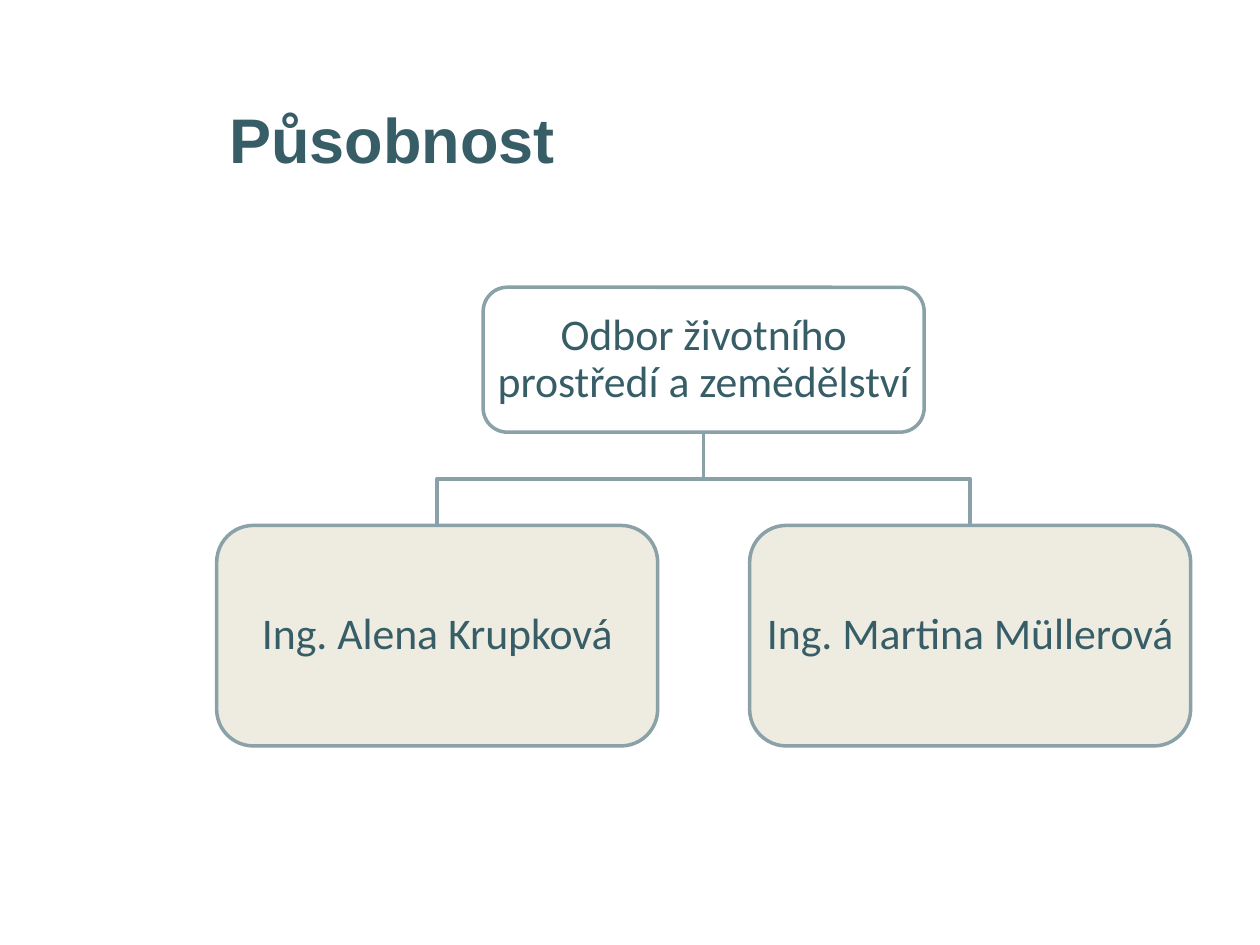
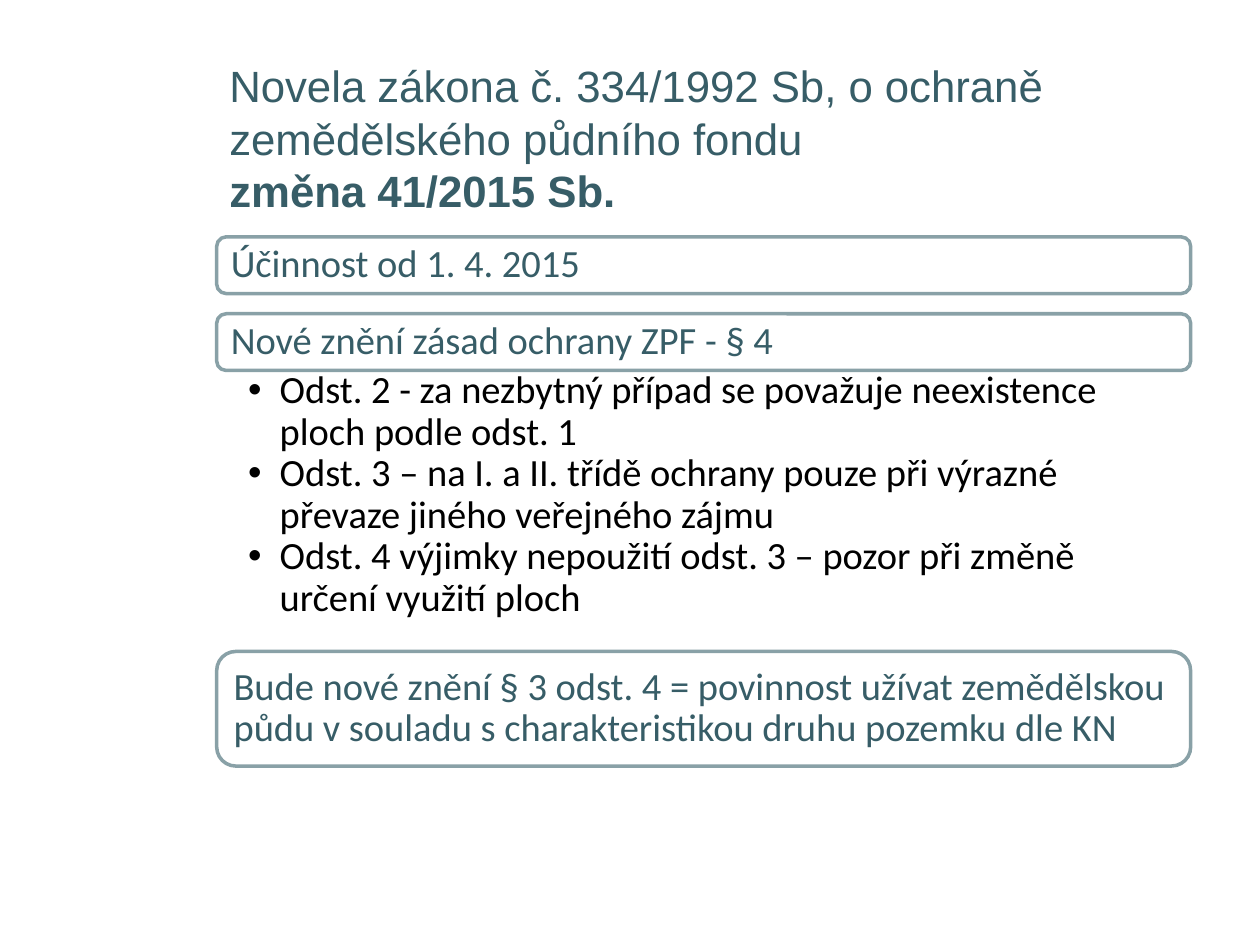
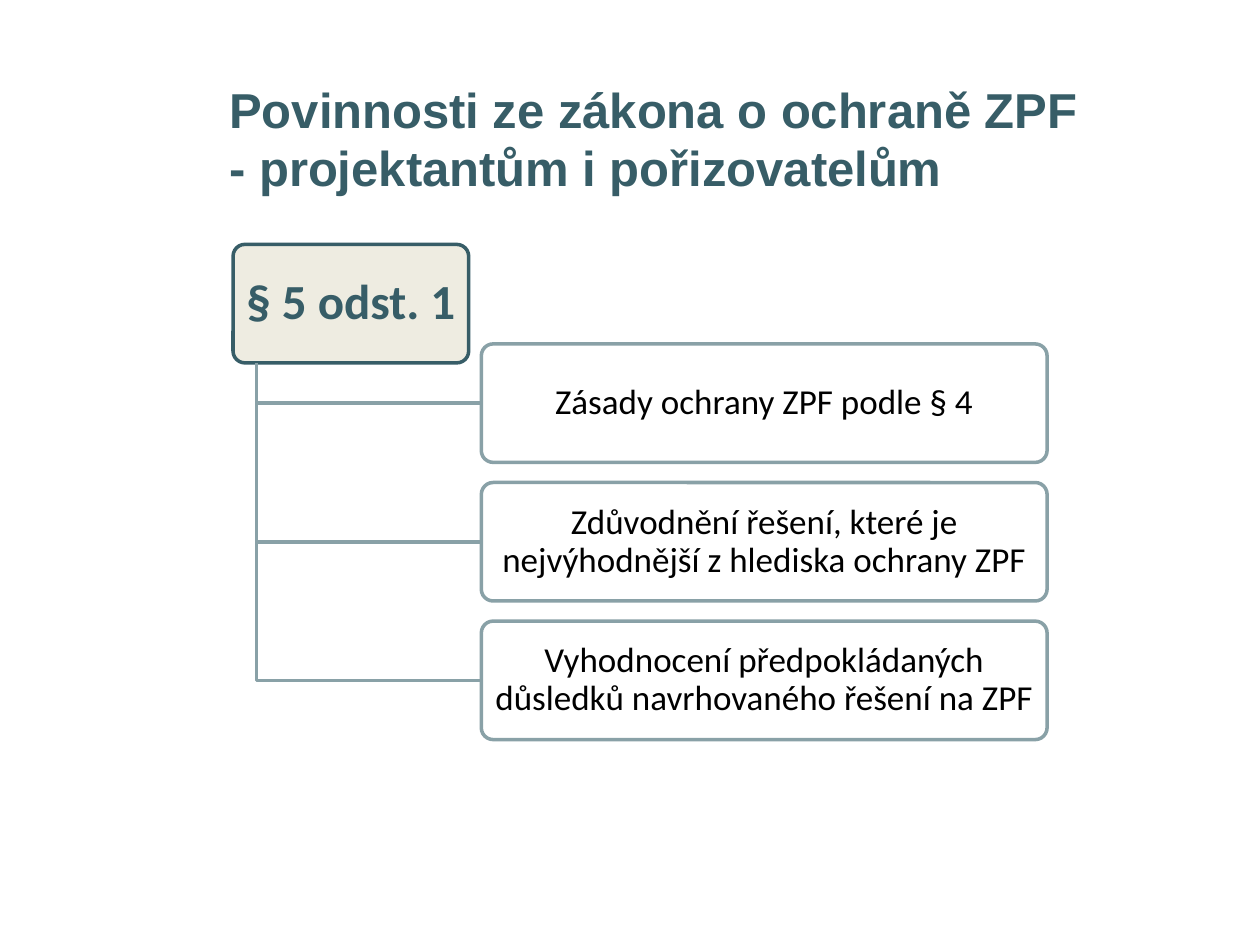
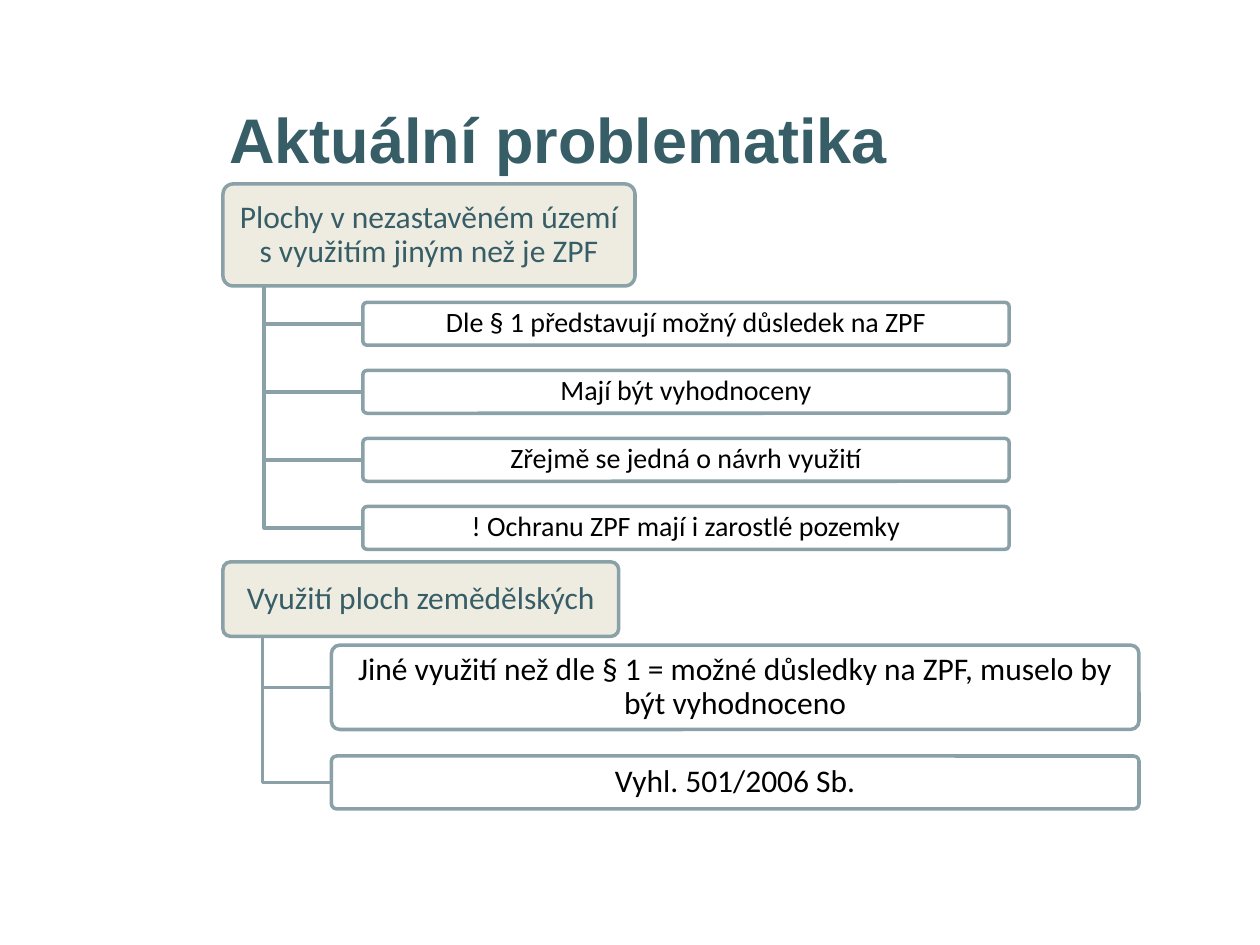
from dataclasses import dataclass

from lxml import etree
from pptx import Presentation
from pptx.dml.color import RGBColor
from pptx.enum.shapes import MSO_SHAPE
from pptx.enum.text import MSO_ANCHOR, MSO_AUTO_SIZE, PP_ALIGN
from pptx.oxml.ns import qn
from pptx.util import Inches, Pt

ROUND_RECT = MSO_SHAPE.ROUNDED_RECTANGLE
LEFT, CENTER = PP_ALIGN.LEFT, PP_ALIGN.CENTER
TOP, MIDDLE = MSO_ANCHOR.TOP, MSO_ANCHOR.MIDDLE
NO_AUTOFIT = MSO_AUTO_SIZE.NONE
TITLE_AND_BODY, TITLE_ONLY = 1, 5


@dataclass(frozen=True)
class Theme:
    teal: str = "375D67"
    line: str = "89A1A7"
    sand: str = "EEECE1"
    white: str = "FFFFFF"
    black: str = "000000"
    title_font: str = "Arial"
    body_font: str = "Calibri"
    title: int = 36
    title_medium: int = 28
    title_small: int = 25
    node: int = 25
    banner: int = 22
    root_large: int = 28
    leaf_large: int = 20
    tree: int = 18
    leaf_small: int = 16
    line_width: int = 2
    left: float = 1.72
    width: float = 7.73


THEME = Theme()


def rgb(value):
    return RGBColor.from_string(value)


def place(sp, left, top, width, height):
    sp.left, sp.top = Inches(left), Inches(top)
    sp.width, sp.height = Inches(width), Inches(height)


def add_bullet(p, indent):
    p.level = 1
    pPr = p._p.get_or_add_pPr()
    pPr.set("marL", str(Inches(indent)))
    pPr.set("indent", str(-Inches(indent)))
    etree.SubElement(pPr, qn("a:buFont")).set("typeface", "Arial")
    etree.SubElement(pPr, qn("a:buChar")).set("char", "•")


def write_text(tf, text, *, size, color=THEME.teal, font=THEME.body_font, bold=False,
               bold_from=0, align=LEFT, anchor=MIDDLE, insets=(0.1, 0.05, 0.1, 0.05),
               spacing=0.9, bullet_indent=None):
    tf.word_wrap = True
    tf.auto_size = NO_AUTOFIT
    tf.vertical_anchor = anchor
    tf.margin_left, tf.margin_top, tf.margin_right, tf.margin_bottom = map(Inches, insets)
    paragraphs = [text] if isinstance(text, str) else text
    for i, paragraph in enumerate(paragraphs):
        p = tf.add_paragraph() if i else tf.paragraphs[0]
        if bullet_indent:
            add_bullet(p, bullet_indent)
        p.alignment = align
        p.line_spacing = spacing
        p.space_before = p.space_after = Pt(0)
        for n, line in enumerate(paragraph.split("\n")):
            if n:
                p.add_line_break()
            r = p.add_run()
            r.text = line
            r.font.name = font
            r.font.size = Pt(size)
            r.font.bold = bold and n >= bold_from
            r.font.color.rgb = rgb(color)


def new_slide(prs, title, *, size=THEME.title, bold_from=0, layout=TITLE_ONLY):
    s = prs.slides.add_slide(prs.slide_layouts[layout])
    s.background.fill.solid()
    s.background.fill.fore_color.rgb = rgb(THEME.white)
    place(s.shapes.title, THEME.left, 0.47, THEME.width, 1.25)
    write_text(s.shapes.title.text_frame, title, size=size, font=THEME.title_font,
               bold=True, bold_from=bold_from, spacing=1.0)
    return s


def style_line(sp, color=THEME.line):
    sp.shadow.inherit = False
    sp.line.color.rgb = rgb(color)
    sp.line.width = Pt(THEME.line_width)


def add_box(s, text, box, *, fill=None, alpha=None, line=THEME.line, corner=None, **fmt):
    sp = s.shapes.add_shape(ROUND_RECT, *map(Inches, box))
    style_line(sp, line)
    if corner is not None:
        sp.adjustments[0] = corner
    if fill:
        sp.fill.solid()
        sp.fill.fore_color.rgb = rgb(fill)
    else:
        sp.fill.background()
    if alpha:
        color = sp.fill._xPr.find(qn("a:solidFill"))[0]
        etree.SubElement(color, qn("a:alpha")).set("val", str(alpha * 1000))
    write_text(sp.text_frame, text, **fmt)


def add_polyline(s, points):
    start, *rest = [(Inches(x), Inches(y)) for x, y in points]
    builder = s.shapes.build_freeform(*start)
    builder.add_line_segments(rest, close=False)
    sp = builder.convert_to_shape()
    sp.fill.background()
    style_line(sp)


def add_tree(s, root_text, root_box, leaves, *, left, top, width, gap, root_size,
             leaf_size, root_line=THEME.line, bold=False, root_insets=(0.04, 0.03, 0.04, 0.03)):
    root_left, root_top, root_width, root_height = root_box
    trunk_x = root_left + root_width / 10
    root_bottom = root_top + root_height
    add_box(s, root_text, root_box, fill=THEME.sand, line=root_line, corner=0.1,
            size=root_size, bold=bold, align=CENTER, insets=root_insets)
    for text, height in leaves:
        middle = top + height / 2
        add_polyline(s, [(trunk_x, root_bottom), (trunk_x, middle), (left, middle)])
        add_box(s, text, (left, top, width, height), fill=THEME.white, alpha=90, corner=0.1,
                size=leaf_size, color=THEME.black, align=CENTER,
                insets=(0.04, 0.03, 0.04, 0.03))
        top += height + gap


def competence_slide(prs):
    s = new_slide(prs, "Působnost")
    node_width, root_top, root_height, child_top = 3.5, 2.28, 1.15, 4.17
    root_bottom = root_top + root_height
    root_x = THEME.left + THEME.width / 2
    bend = (root_bottom + child_top) / 2
    node = dict(size=THEME.node, align=CENTER, insets=(0.02,) * 4)
    people = [("Ing. Alena Krupková", THEME.left),
              ("Ing. Martina Müllerová", THEME.left + THEME.width - node_width)]
    for _, left in people:
        x = left + node_width / 2
        add_polyline(s, [(root_x, root_bottom), (root_x, bend), (x, bend), (x, child_top)])
    add_box(s, "Odbor životního prostředí a zemědělství",
            (root_x - node_width / 2, root_top, node_width, root_height), **node)
    for name, left in people:
        add_box(s, name, (left, child_top, node_width, 1.75), fill=THEME.sand, **node)


def amendment_slide(prs):
    s = new_slide(prs, "Novela zákona č. 334/1992 Sb, o ochraně zemědělského půdního fondu\n"
                  "změna 41/2015 Sb.", size=THEME.title_small, bold_from=1,
                  layout=TITLE_AND_BODY)
    banners = [
        ("Účinnost od 1. 4. 2015", 1.88, 0.45),
        ("Nové znění zásad ochrany ZPF - § 4", 2.49, 0.45),
        ("Bude nové znění § 3 odst. 4 = povinnost užívat zemědělskou půdu v souladu "
         "s charakteristikou druhu pozemku dle KN", 5.17, 0.91),
    ]
    for text, top, height in banners:
        add_box(s, text, (THEME.left, top, THEME.width, height), size=THEME.banner,
                insets=(0.09,) * 4)
    body = s.placeholders[1]
    place(body, THEME.left, 2.91, THEME.width, 2.47)
    write_text(body.text_frame, [
        "Odst. 2 - za nezbytný případ se považuje neexistence ploch podle odst. 1",
        "Odst. 3 – na I. a II. třídě ochrany pouze při výrazné převaze jiného veřejného zájmu",
        "Odst. 4 výjimky nepoužití odst. 3 – pozor při změně určení využití ploch",
    ], size=THEME.banner, color=THEME.black, anchor=TOP, insets=(0.25, 0.03, 0.17, 0.03),
        bullet_indent=0.25)


def duties_slide(prs):
    s = new_slide(prs, "Povinnosti ze zákona o ochraně ZPF\n- projektantům i pořizovatelům",
                  size=THEME.title_medium)
    duties = ["Zásady ochrany ZPF podle § 4",
              "Zdůvodnění řešení, které je nejvýhodnější z hlediska ochrany ZPF",
              "Vyhodnocení předpokládaných důsledků navrhovaného řešení na ZPF"]
    add_tree(s, "§ 5 odst. 1", (1.85, 1.94, 1.87, 0.94), [(text, 0.94) for text in duties],
             left=3.82, top=2.73, width=4.49, gap=0.16, root_size=THEME.root_large,
             leaf_size=THEME.leaf_large, root_line=THEME.teal, bold=True,
             root_insets=(0.06, 0.04, 0.06, 0.04))


def current_issues_slide(prs):
    s = new_slide(prs, "Aktuální problematika")
    issues = ["Dle § 1 představují možný důsledek na ZPF",
              "Mají být vyhodnoceny",
              "Zřejmě se jedná o návrh využití",
              "! Ochranu ZPF mají i zarostlé pozemky"]
    add_tree(s, "Plochy v nezastavěném území s využitím jiným než je ZPF",
             (1.77, 1.46, 3.27, 0.81), [(text, 0.34) for text in issues],
             left=2.88, top=2.4, width=5.13, gap=0.2, root_size=THEME.tree,
             leaf_size=THEME.leaf_small)
    uses = [("Jiné využití než dle § 1 = možné důsledky na ZPF, muselo by být vyhodnoceno", 0.67),
            ("Vyhl. 501/2006 Sb.", 0.42)]
    add_tree(s, "Využití ploch zemědělských", (1.77, 4.46, 3.14, 0.59), uses,
             left=2.63, top=5.12, width=6.41, gap=0.21, root_size=THEME.tree,
             leaf_size=THEME.tree)


def main():
    prs = Presentation()
    prs.slide_width, prs.slide_height = Inches(10), Inches(7.5)
    competence_slide(prs)
    amendment_slide(prs)
    duties_slide(prs)
    current_issues_slide(prs)
    prs.save("out.pptx")


if __name__ == "__main__":
    main()
